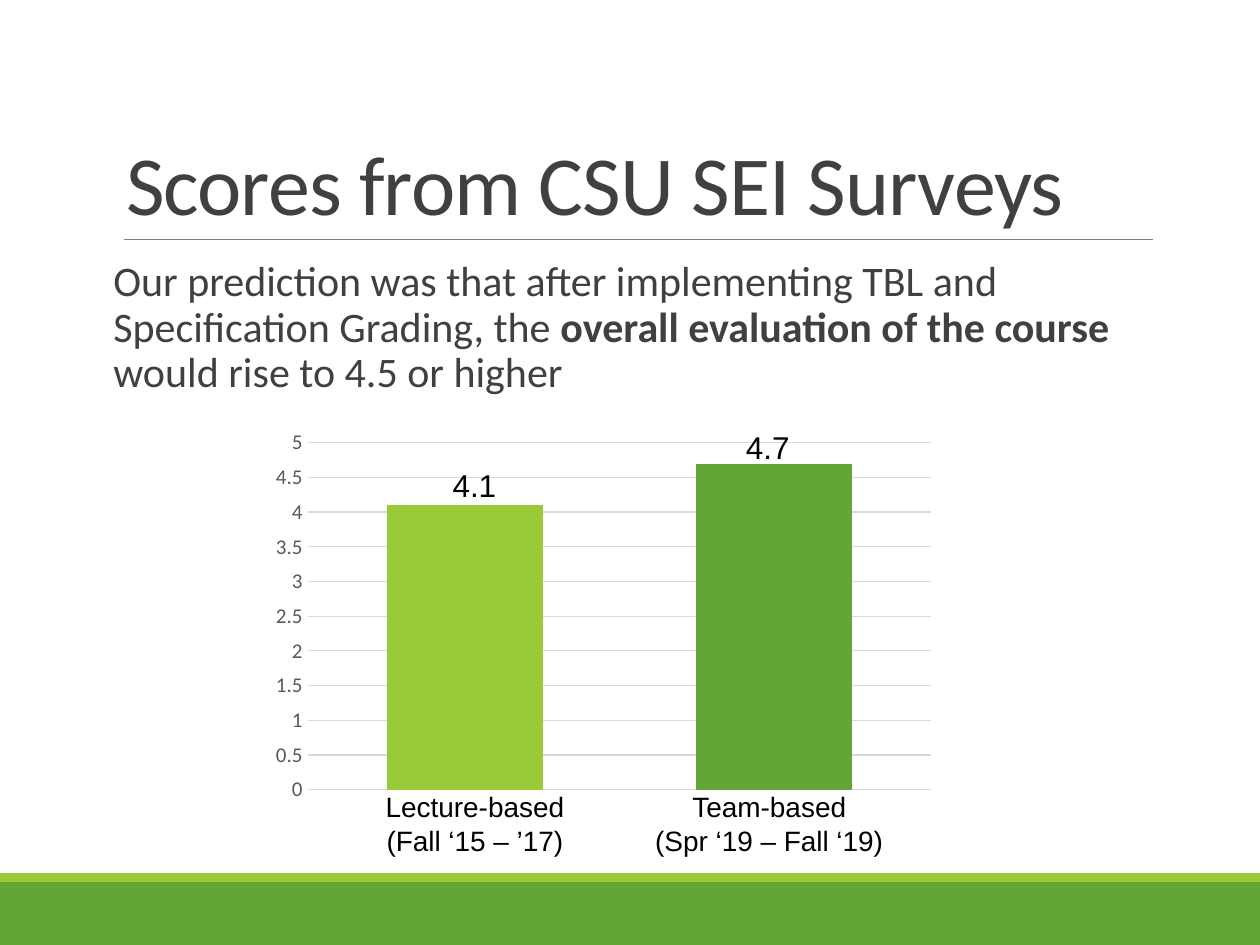
import pptx
import pptx.chart.data
import pptx.dml.color
import pptx.enum.chart
import pptx.enum.shapes
import pptx.enum.text
import pptx.oxml
import pptx.oxml.ns
import pptx.util
from pptx.util import Pt

COLORS = {
    "lime": "99CB38",
    "green": "63A537",
    "rule": "808080",
    "heading": "404040",
    "axis": "595959",
    "grid": "D9D9D9",
    "label": "000000",
}
SCORES = [("Series 1", 4.1, "lime"), ("Series 2", 4.7, "green")]


def rgb(name):
    return pptx.dml.color.RGBColor.from_string(COLORS[name])


def place(shape, left, top, width, height):
    shape.left, shape.top = Pt(left), Pt(top)
    shape.width, shape.height = Pt(width), Pt(height)


def style_font(font, size, color, name="Calibri"):
    font.size, font.name = Pt(size), name
    font.color.rgb = rgb(color)


def add_run(paragraph, text, size, color, name="Calibri", bold=False):
    run = paragraph.add_run()
    run.text = text
    style_font(run.font, size, color, name)
    run.font.bold = bold
    return run


def add_band(slide, top, height, color):
    band = slide.shapes.add_shape(
        pptx.enum.shapes.MSO_SHAPE.RECTANGLE, 0, Pt(top), Pt(720), Pt(height))
    band.shadow.inherit = False
    band.fill.solid()
    band.fill.fore_color.rgb = rgb(color)
    band.line.fill.background()


def add_rule(slide, left, right, y):
    rule = slide.shapes.add_connector(
        pptx.enum.shapes.MSO_CONNECTOR.STRAIGHT, Pt(left), Pt(y), Pt(right), Pt(y))
    rule.line.color.rgb = rgb("rule")
    rule.line.width = Pt(0.5)
    properties = rule._element.spPr
    properties.append(pptx.oxml.parse_xml(
        f"<a:effectLst {pptx.oxml.ns.nsdecls('a')}/>"))


def set_title(slide, text):
    title = slide.shapes.title
    place(title, 64.8, 22.3, 594, 114.5)
    frame = title.text_frame
    frame.word_wrap = True
    frame.auto_size = pptx.enum.text.MSO_AUTO_SIZE.NONE
    frame.vertical_anchor = pptx.enum.text.MSO_ANCHOR.BOTTOM
    paragraph = frame.paragraphs[0]
    paragraph.alignment = pptx.enum.text.PP_ALIGN.LEFT
    paragraph.line_spacing = 0.85
    run = add_run(paragraph, text, 48, "heading")
    run.font._element.set("spc", "-50")


def add_prediction(slide):
    box = slide.shapes.add_textbox(Pt(64.8), Pt(145.4), Pt(615), Pt(317))
    frame = box.text_frame
    frame.word_wrap = True
    frame.margin_left = frame.margin_right = 0
    paragraph = frame.paragraphs[0]
    paragraph.line_spacing = 0.9
    paragraph.space_before, paragraph.space_after = Pt(12), Pt(2)
    for text, bold in [
        ("Our prediction was that after implementing TBL and Specification Grading, the ", False),
        ("overall evaluation of the course ", True),
        ("would rise to 4.5 or higher", False),
    ]:
        add_run(paragraph, text, 24, "heading", bold=bold)


def fix_plot_area(chart, x, y, w, h):
    """Pin the inner plot area to fractions of the chart frame."""
    plot_area = chart._chartSpace.chart.plotArea
    for old in plot_area.findall(pptx.oxml.ns.qn("c:layout")):
        plot_area.remove(old)
    sizes = "".join(f'<c:{tag} val="{value}"/>'
                    for tag, value in zip("xywh", (x, y, w, h)))
    plot_area.insert(0, pptx.oxml.parse_xml(
        f"<c:layout {pptx.oxml.ns.nsdecls('c')}><c:manualLayout>"
        '<c:layoutTarget val="inner"/><c:xMode val="edge"/><c:yMode val="edge"/>'
        f"{sizes}</c:manualLayout></c:layout>"))


def add_score_chart(slide):
    data = pptx.chart.data.CategoryChartData()
    data.categories = ["1"]
    for name, score, _ in SCORES:
        data.add_series(name, [score])
    chart = slide.shapes.add_chart(
        pptx.enum.chart.XL_CHART_TYPE.COLUMN_CLUSTERED,
        Pt(148.3), Pt(242), Pt(391.7), Pt(220.3), data).chart
    chart.has_legend = chart.has_title = False
    style_font(chart.font, 10, "label")
    chart.category_axis.visible = False

    axis = chart.value_axis
    axis.minimum_scale, axis.maximum_scale, axis.major_unit = 0, 5, 0.5
    axis.major_tick_mark = pptx.enum.chart.XL_TICK_MARK.NONE
    axis.format.line.fill.background()
    axis.major_gridlines.format.line.color.rgb = rgb("grid")
    axis.major_gridlines.format.line.width = Pt(0.75)
    style_font(axis.tick_labels.font, 12, "axis")
    axis.tick_labels.number_format = "General"
    axis.tick_labels.number_format_is_linked = False

    plot = chart.plots[0]
    plot.vary_by_categories = False
    plot.gap_width, plot.overlap = 102, -98
    for series, (_, _, color) in zip(plot.series, SCORES):
        series.format.fill.solid()
        series.format.fill.fore_color.rgb = rgb(color)
    fix_plot_area(chart, 0.07, 0.05, 0.91, 0.9)


def add_label(slide, left, top, width, height, lines, size):
    box = slide.shapes.add_textbox(Pt(left), Pt(top), Pt(width), Pt(height))
    frame = box.text_frame
    frame.word_wrap = True
    for index, line in enumerate(lines):
        paragraph = frame.add_paragraph() if index else frame.paragraphs[0]
        paragraph.alignment = pptx.enum.text.PP_ALIGN.CENTER
        add_run(paragraph, line, size, "label", "Arial")


def main():
    deck = pptx.Presentation()
    deck.slide_width, deck.slide_height = Pt(720), Pt(540)
    slide = deck.slides.add_slide(deck.slide_layouts[5])

    add_band(slide, 504, 36, "green")
    add_band(slide, 499, 5, "lime")
    add_rule(slide, 70.6, 658.8, 136.8)
    set_title(slide, "Scores from CSU SEI Surveys")
    add_prediction(slide)
    add_score_chart(slide)
    add_label(slide, 205.2, 447.8, 132.5, 46, ["Lecture-based", "(Fall ‘15 – ’17)"], 16)
    add_label(slide, 352.1, 447.8, 175, 46, ["Team-based", "(Spr ‘19 – Fall ‘19)"], 16)
    add_label(slide, 251.3, 262.8, 39.6, 29, ["4.1"], 18)
    add_label(slide, 419, 241.2, 39.6, 29, ["4.7"], 18)
    deck.save("out.pptx")


if __name__ == "__main__":
    main()
